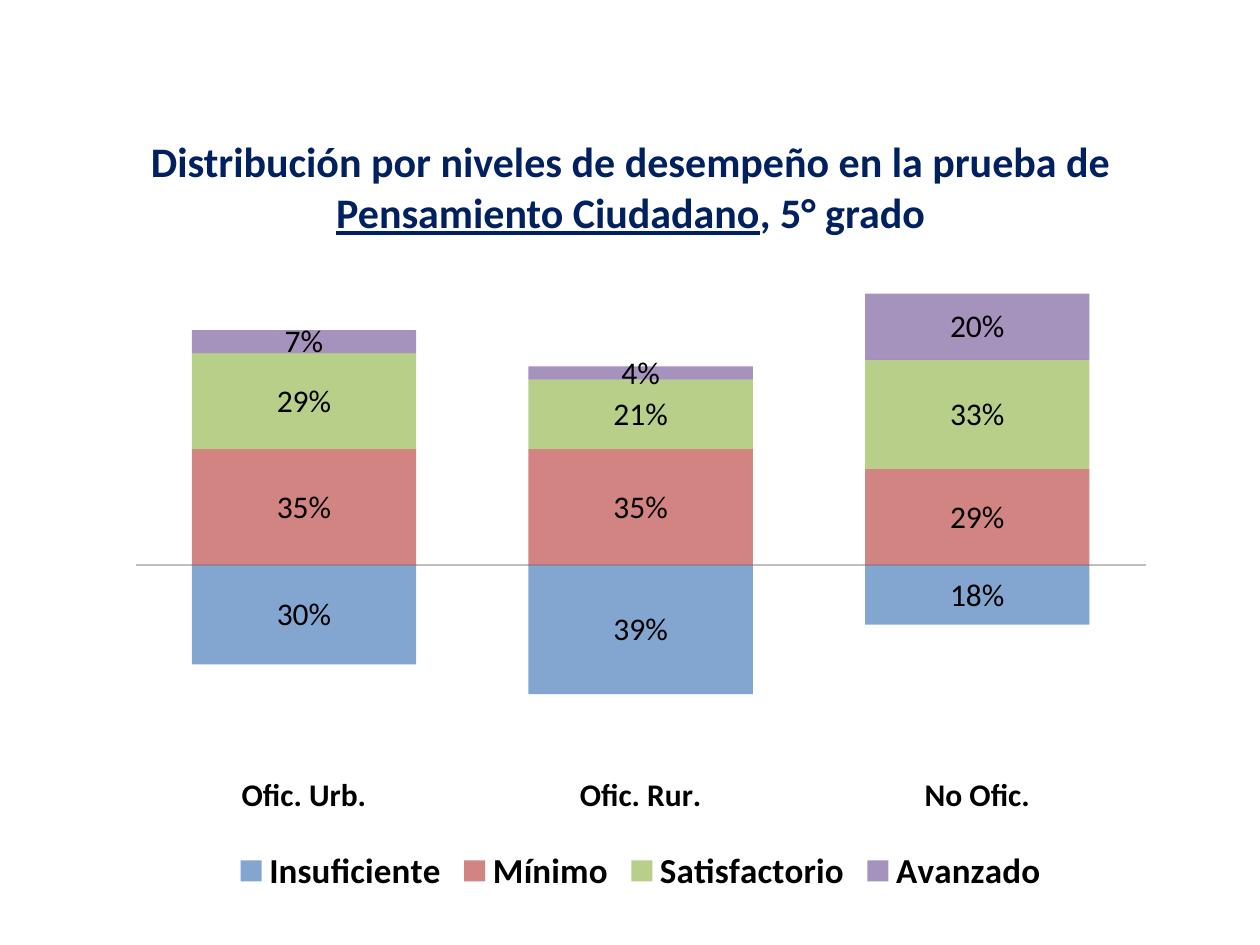
from dataclasses import dataclass
from typing import NamedTuple

from lxml import etree
from pptx import Presentation
from pptx.chart.data import CategoryChartData
from pptx.dml.color import RGBColor
from pptx.enum.chart import (XL_CHART_TYPE, XL_LABEL_POSITION,
                             XL_LEGEND_POSITION, XL_TICK_LABEL_POSITION,
                             XL_TICK_MARK)
from pptx.enum.text import MSO_AUTO_SIZE, PP_ALIGN
from pptx.oxml.ns import qn
from pptx.util import Inches, Pt

STACK = XL_CHART_TYPE.COLUMN_STACKED
MID = XL_LABEL_POSITION.CENTER
BOTTOM = XL_LEGEND_POSITION.BOTTOM
LOW = XL_TICK_LABEL_POSITION.LOW
HIDE = XL_TICK_LABEL_POSITION.NONE
BARE = XL_TICK_MARK.NONE
GROW = MSO_AUTO_SIZE.SHAPE_TO_FIT_TEXT
CENTER = PP_ALIGN.CENTER

COLS, ROWS = 100, 75
CELL = Inches(0.1)


@dataclass(frozen=True)
class Theme:
    face: str = "Calibri"
    navy: str = "002060"
    ink: str = "000000"
    rule: str = "BFBFBF"
    title: int = 24
    key: int = 20
    body: int = 18
    alpha: int = 70


class Area(NamedTuple):
    col: float
    row: float
    wide: float
    high: float

    def place(self) -> list:
        return [round(part * CELL) for part in self]


class Level(NamedTuple):
    name: str
    color: str
    shares: tuple


class Part(NamedTuple):
    text: str
    line: bool = False


THEME = Theme()
HEAD = Area(2.8, 10.3, 94.5, 9.1)
GRAPH = Area(9.1, 17.5, 83.5, 53.9)
PLOT = {"x": 0.02, "y": 0.02, "w": 0.96, "h": 0.78}
TITLE = [
    Part("Distribución por niveles de desempeño en la prueba de "),
    Part("Pensamiento Ciudadano", True),
    Part(", 5° grado"),
]
GROUPS = ["Ofic. Urb.", "Ofic. Rur.", "No Ofic."]
LEVELS = [
    Level("Insuficiente", "4F81BD", (-0.3, -0.39, -0.18)),
    Level("Mínimo", "C0504D", (0.35, 0.35, 0.29)),
    Level("Satisfactorio", "9BBB59", (0.29, 0.21, 0.33)),
    Level("Avanzado", "8064A2", (0.07, 0.04, 0.2)),
]


def apply(item, values: dict) -> None:
    for name, value in values.items():
        setattr(item, name, value)


def style(font, size: int, color: str, bold: bool = False) -> None:
    apply(font, {"name": THEME.face, "size": Pt(size), "bold": bold})
    font.color.rgb = RGBColor.from_string(color)


def draw_title(slide, area: Area, parts: list) -> None:
    frame = slide.shapes.add_textbox(*area.place()).text_frame
    apply(frame, {"word_wrap": True, "auto_size": GROW})
    para = frame.paragraphs[0]
    para.alignment = CENTER
    for part in parts:
        run = para.add_run()
        run.text = part.text
        style(run.font, THEME.title, THEME.navy, True)
        run.font.underline = part.line


def paint(series, level: Level) -> None:
    series.invert_if_negative = False
    fill = series.format.fill
    fill.solid()
    fill.fore_color.rgb = RGBColor.from_string(level.color)
    color = series.format._element.find(".//" + qn("a:srgbClr"))
    etree.SubElement(color, qn("a:alpha"), val=str(THEME.alpha * 1000))
    labels = series.data_labels
    apply(labels, {"show_value": True, "position": MID,
                   "number_format": "0%;0%",
                   "number_format_is_linked": False})
    style(labels.font, THEME.body, THEME.ink)


def fit_plot(chart) -> None:
    area = chart._chartSpace.chart.plotArea
    for old in area.findall(qn("c:layout")):
        area.remove(old)
    layout = etree.Element(qn("c:layout"))
    area.insert(0, layout)
    manual = etree.SubElement(layout, qn("c:manualLayout"))
    rules = {"layoutTarget": "inner", "xMode": "edge", "yMode": "edge", **PLOT}
    for name, value in rules.items():
        etree.SubElement(manual, qn("c:" + name), val=str(value))


def draw_chart(slide, area: Area, groups: list, levels: list) -> None:
    data = CategoryChartData(number_format="0%")
    data.categories = groups
    for level in levels:
        data.add_series(level.name, level.shares)
    chart = slide.shapes.add_chart(STACK, *area.place(), data).chart
    apply(chart, {"has_title": False, "has_legend": True})
    style(chart.font, THEME.body, THEME.ink)
    apply(chart.legend, {"position": BOTTOM, "include_in_layout": False})
    style(chart.legend.font, THEME.key, THEME.ink, True)
    plot = chart.plots[0]
    apply(plot, {"gap_width": 50, "overlap": 100, "vary_by_categories": False})
    for series, level in zip(plot.series, levels):
        paint(series, level)

    ticks = {"major_tick_mark": BARE, "minor_tick_mark": BARE,
             "has_major_gridlines": False}
    base, scale = chart.category_axis, chart.value_axis
    apply(base, {**ticks, "tick_label_position": LOW})
    style(base.tick_labels.font, THEME.body, THEME.ink, True)
    base.format.line.color.rgb = RGBColor.from_string(THEME.rule)
    base.format.line.width = Pt(0.75)
    apply(scale, {**ticks, "tick_label_position": HIDE,
                  "minimum_scale": -0.6, "maximum_scale": 1})
    style(scale.tick_labels.font, THEME.body, THEME.ink)
    apply(scale.tick_labels, {"number_format": "0%",
                              "number_format_is_linked": False})
    scale.format.line.fill.background()
    fit_plot(chart)


def main() -> None:
    deck = Presentation()
    apply(deck, {"slide_width": COLS * CELL, "slide_height": ROWS * CELL})
    slide = deck.slides.add_slide(deck.slide_layouts[6])
    draw_title(slide, HEAD, TITLE)
    draw_chart(slide, GRAPH, GROUPS, LEVELS)
    deck.save("out.pptx")


if __name__ == "__main__":
    main()
